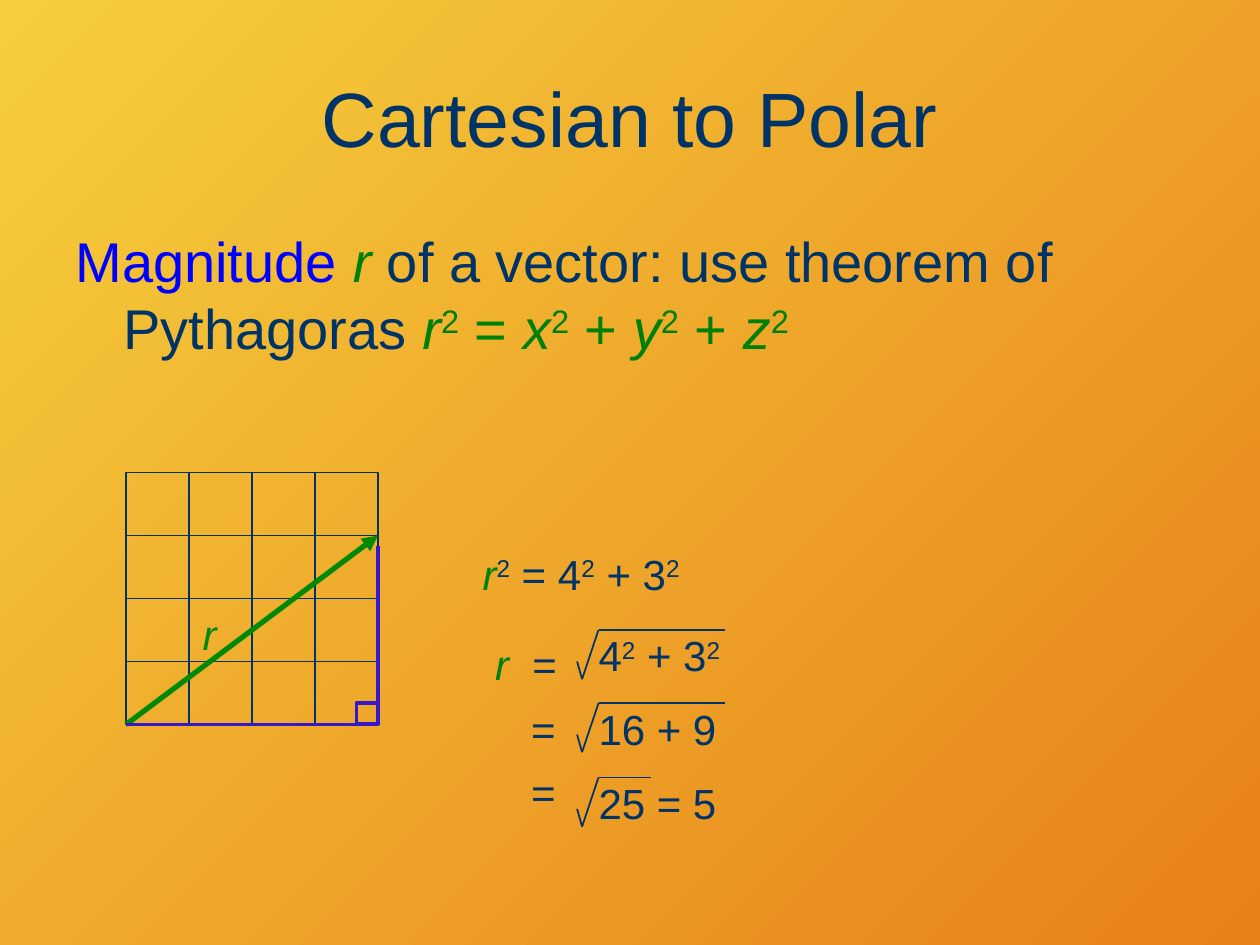
"""Build a slide on finding the magnitude of a vector with the theorem of Pythagoras."""
from dataclasses import dataclass
from itertools import product

from lxml.etree import SubElement
from pptx import Presentation
from pptx.dml.color import RGBColor
from pptx.enum.shapes import MSO_CONNECTOR, MSO_SHAPE
from pptx.enum.text import MSO_ANCHOR, MSO_AUTO_SIZE, PP_ALIGN
from pptx.oxml.ns import qn
from pptx.util import Inches, Pt

COLORS = {
    "navy": "003366", "blue": "0000FF", "green": "008000", "vector": "008901",
    "side": "3519CA", "yellow": "F5CE3D", "orange": "E88018",
}
FONT = "Arial"
CELL = 0.5
GRID_LEFT, GRID_TOP, GRID_COUNT = 1, 3.75, 4


@dataclass
class Run:
    text: str
    color: str = "navy"
    italic: bool = False
    sup: bool = False
    spacing: float = 0


@dataclass
class Label:
    left: float
    top: float
    width: float
    runs: list[Run]
    align: PP_ALIGN = PP_ALIGN.LEFT


@dataclass
class Root:
    top: float
    bar_right: float
    runs: list[Run]


def rgb(name: str) -> RGBColor:
    return RGBColor.from_string(COLORS[name])


def powers(text: str, color: str = "navy") -> list[Run]:
    """Split at ^2 into plain and raised runs; letters become italic."""
    runs = []
    for i, part in enumerate(text.split("^2")):
        if i:
            runs.append(Run("2", color, sup=True))
        base = part.rstrip("rxyz")
        if base:
            runs.append(Run(base, color))
        if part[len(base):]:
            runs.append(Run(part[len(base):], color, italic=True))
    return runs


def add_runs(p, runs: list[Run], size: float) -> None:
    for run in runs:
        r = p.add_run()
        r.text = run.text
        r.font.name, r.font.size = FONT, Pt(size)
        r.font.italic = run.italic
        r.font.color.rgb = rgb(run.color)
        if run.sup:
            r.font._element.set("baseline", "30000")
        if run.spacing:
            r.font._element.set("spc", str(int(run.spacing * 100)))


def add_block(s, top: float, runs: list[Run], size: float):
    """Add a full-width text box and return its frame."""
    sp = s.shapes.add_textbox(Inches(0.5), Inches(top), Inches(9), Inches(1.25))
    tf = sp.text_frame
    tf.word_wrap = True
    add_runs(tf.paragraphs[0], runs, size)
    return tf


def add_label(s, label: Label) -> None:
    sp = s.shapes.add_textbox(Inches(label.left), Inches(label.top),
                              Inches(label.width), Inches(0.4))
    tf = sp.text_frame
    tf.word_wrap = True
    tf.auto_size = MSO_AUTO_SIZE.SHAPE_TO_FIT_TEXT
    tf.margin_left = tf.margin_top = tf.margin_right = tf.margin_bottom = 0
    tf.paragraphs[0].alignment = label.align
    add_runs(tf.paragraphs[0], label.runs, 24)


def add_square(s, left: float, top: float, side: float, color: str, width: float) -> None:
    sp = s.shapes.add_shape(MSO_SHAPE.RECTANGLE, Inches(left), Inches(top),
                            Inches(side), Inches(side))
    sp.shadow.inherit = False
    sp.fill.background()
    sp.line.color.rgb = rgb(color)
    sp.line.width = Pt(width)


def add_line(s, start: tuple[float, float], end: tuple[float, float],
             color: str, width: float, arrow: bool = False) -> None:
    sp = s.shapes.add_connector(MSO_CONNECTOR.STRAIGHT,
                                *(Inches(v) for v in (*start, *end)))
    sp.line.color.rgb = rgb(color)
    sp.line.width = Pt(width)
    if arrow:
        SubElement(sp.line._get_or_add_ln(), qn("a:tailEnd"), type="triangle")
    SubElement(sp._element.spPr, qn("a:effectLst"))


def add_root(s, root: Root) -> None:
    """Add a radical sign with the term beneath its bar."""
    add_label(s, Label(4.75, root.top, 1.42, root.runs))
    points = [(4.58, root.top + 0.25), (4.62, root.top + 0.39),
              (4.75, root.top), (root.bar_right, root.top)]
    for start, end in zip(points, points[1:]):
        add_line(s, start, end, "navy", 1)


def add_diagram(s) -> None:
    """Add the grid, the vector and the two sides of its triangle."""
    right = GRID_LEFT + GRID_COUNT * CELL
    bottom = GRID_TOP + GRID_COUNT * CELL
    for row, col in product(reversed(range(GRID_COUNT)), range(GRID_COUNT)):
        add_square(s, GRID_LEFT + col * CELL, GRID_TOP + row * CELL, CELL, "navy", 0.75)
    add_line(s, (GRID_LEFT, bottom), (right, GRID_TOP + CELL), "vector", 3, arrow=True)
    add_line(s, (GRID_LEFT, bottom), (right, bottom), "side", 2.25)
    add_line(s, (right, bottom), (right, 4.33), "side", 2.25)
    add_square(s, right - 0.17, bottom - 0.17, 0.17, "side", 2.25)


def main() -> None:
    prs = Presentation()
    prs.slide_width, prs.slide_height = Inches(10), Inches(7.5)
    s = prs.slides.add_slide(prs.slide_layouts[6])
    fill = s.background.fill
    fill.gradient()
    fill.gradient_angle = 315
    for stop, color, position in zip(fill.gradient_stops, ("yellow", "orange"), (0, 1)):
        stop.color.rgb = rgb(color)
        stop.position = position

    tf = add_block(s, 0.3, [Run("Cartesian to Polar")], 44)
    tf.vertical_anchor = MSO_ANCHOR.MIDDLE
    tf.paragraphs[0].alignment = PP_ALIGN.CENTER

    tf = add_block(s, 1.75, [
        Run("Magnitude ", "blue"), Run("r ", "green", italic=True),
        Run("of a vector: use theorem of Pythagoras "),
        *powers("r^2 = x^2 + y^2 + z^2", "green"),
    ], 32)
    pPr = tf.paragraphs[0]._p.get_or_add_pPr()
    pPr.set("marL", str(Inches(0.38)))
    pPr.set("indent", str(Inches(-0.38)))

    add_diagram(s)

    r_run = Run("r", "green", italic=True)
    equals = Run("=")
    labels = [
        Label(3.83, 4.35, 1.92, [r_run, *powers("^2 = 4^2 + 3^2")]),
        Label(3.67, 5.07, 0.75, [r_run, Run(" ", "green", italic=True, spacing=6.67), equals],
              PP_ALIGN.RIGHT),
        Label(4.08, 5.58, 0.33, [equals], PP_ALIGN.RIGHT),
        Label(4.08, 6.08, 0.33, [equals], PP_ALIGN.RIGHT),
        Label(1.5, 4.83, 0.33, [Run("r", "vector", italic=True)], PP_ALIGN.CENTER),
    ]
    for label in labels:
        add_label(s, label)

    roots = [
        Root(5, 5.75, powers("4^2 + 3^2")),
        Root(5.58, 5.75, [Run("16 + 9")]),
        Root(6.17, 5.17, [Run("25 = 5")]),
    ]
    for root in roots:
        add_root(s, root)

    prs.save("out.pptx")


if __name__ == "__main__":
    main()
